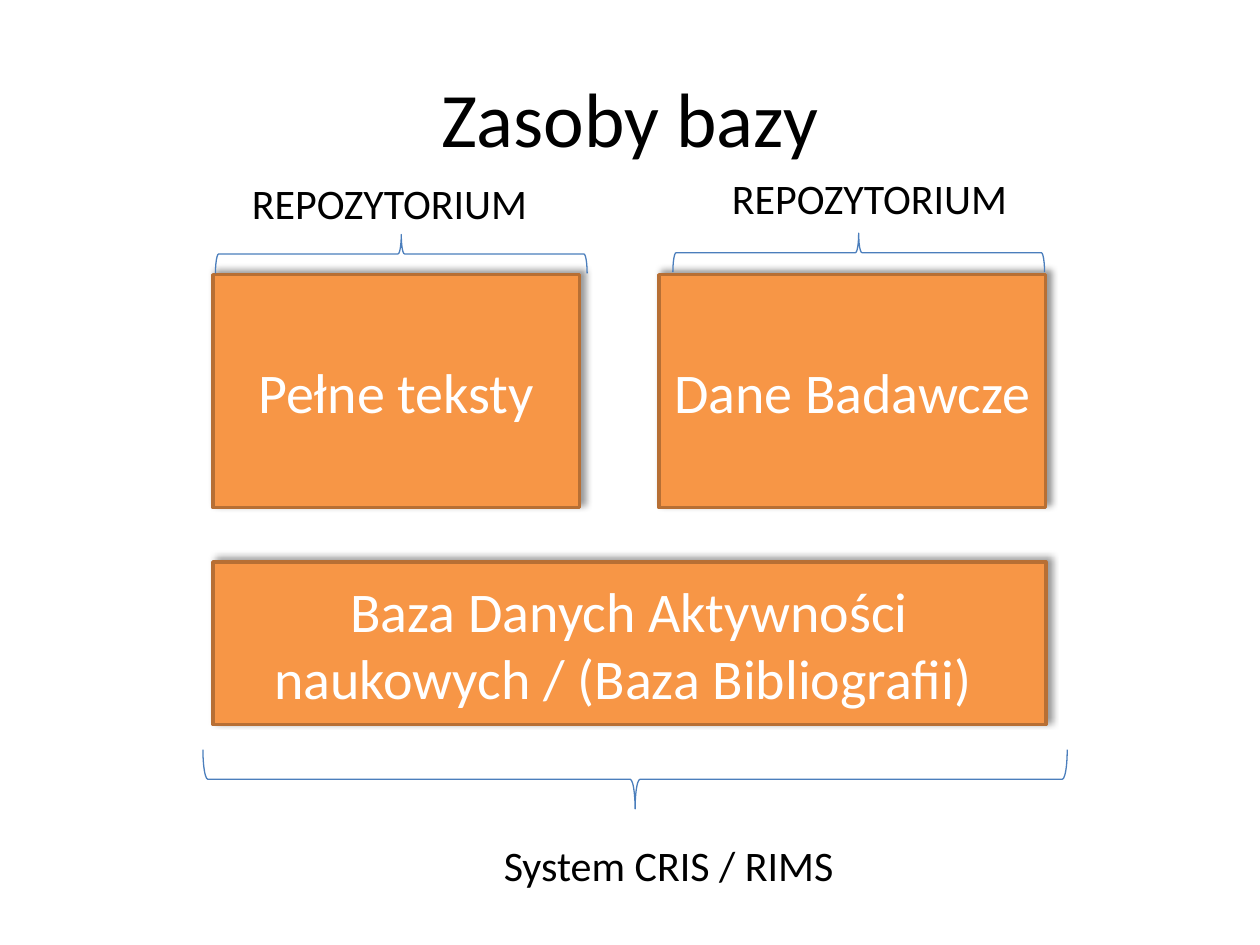
import pptx
import pptx.util
import pptx.dml.color
import pptx.enum.shapes
import pptx.enum.text
import pptx.oxml
import pptx.oxml.ns

Inches, Pt = pptx.util.Inches, pptx.util.Pt
SHAPE = pptx.enum.shapes.MSO_SHAPE
ALIGN, ANCHOR = pptx.enum.text.PP_ALIGN, pptx.enum.text.MSO_ANCHOR

LEFT, RIGHT = 1.69, 8.3
BOX_TOP, BOX_H = 2.18, 1.85
BRACE_W, BRACE_H = 2.95, 0.31


def rgb(value):
    return pptx.dml.color.RGBColor.from_string(value)


def write(shape, text, size, color, align):
    tf = shape.text_frame
    tf.text = text
    p = tf.paragraphs[0]
    p.alignment = align
    font = p.runs[0].font
    font.name, font.size = "Calibri", Pt(size)
    font.color.rgb = rgb(color)
    return tf


def add_shadow(shape):
    """Soft shadow towards the upper right."""
    shape.shadow.inherit = False
    effects = shape._element.spPr.find(pptx.oxml.ns.qn("a:effectLst"))
    effects.append(pptx.oxml.parse_xml(
        f'<a:outerShdw {pptx.oxml.ns.nsdecls("a")} blurRad="{Pt(4)}" dist="{Pt(3)}" '
        'dir="18900000" algn="bl" rotWithShape="0">'
        '<a:srgbClr val="000000"><a:alpha val="40000"/></a:srgbClr></a:outerShdw>'))


def add_title(s, text, x, y, w, h):
    title = s.shapes.title
    title.left, title.top, title.width, title.height = map(Inches, (x, y, w, h))
    tf = write(title, text, 44, "000000", ALIGN.CENTER)
    tf.vertical_anchor = ANCHOR.MIDDLE


def add_box(s, text, x, y, w, h):
    sp = s.shapes.add_shape(SHAPE.RECTANGLE, *map(Inches, (x, y, w, h)))
    sp.fill.solid()
    sp.fill.fore_color.rgb = rgb("F79646")
    sp.line.color.rgb = rgb("B76F34")
    sp.line.width = Pt(2)
    add_shadow(sp)
    tf = write(sp, text, 32, "FFFFFF", ALIGN.CENTER)
    tf.vertical_anchor = ANCHOR.MIDDLE


def add_brace(s, rotation, x, y, w, h):
    """Horizontal brace filling the box, made from a brace turned a quarter."""
    sp = s.shapes.add_shape(SHAPE.RIGHT_BRACE, Inches(x + (w - h) / 2),
                            Inches(y + (h - w) / 2), Inches(h), Inches(w))
    sp.rotation = rotation
    sp.fill.background()
    sp.line.color.rgb = rgb("4B7EBC")
    sp.line.width = Pt(0.75)
    sp.shadow.inherit = False


def add_label(s, text, x, y, w, h=0.5):
    sp = s.shapes.add_textbox(*map(Inches, (x, y, w, h)))
    tf = write(sp, text, 24, "000000", ALIGN.LEFT)
    tf.word_wrap = False
    tf.auto_size = pptx.enum.text.MSO_AUTO_SIZE.SHAPE_TO_FIT_TEXT


def add_repository(s, text, x, w, brace, label):
    """Box with a brace and a label above it; brace and label are (x, y)."""
    add_box(s, text, x, BOX_TOP, w, BOX_H)
    add_brace(s, 270, *brace, BRACE_W, BRACE_H)
    add_label(s, "REPOZYTORIUM", *label, 2.41)


def add_database(s, text, x, y, w, h):
    """Wide box with the system brace and its label below."""
    add_box(s, text, x, y, w, h)
    add_brace(s, 90, x - 0.08, y + h + 0.2, w + 0.25, 0.47)
    add_label(s, "System CRIS / RIMS", 3.9, 6.61, 2.84)


def main():
    prs = pptx.Presentation()
    prs.slide_width, prs.slide_height = Inches(10), Inches(7.5)
    s = prs.slides.add_slide(prs.slide_layouts[5])
    add_title(s, "Zasoby bazy", 0.5, 0.3, 9, 1.25)
    add_repository(s, "Pełne teksty", LEFT, 2.91, (1.71, 1.86), (1.9, 1.36))
    add_repository(s, "Dane Badawcze", RIGHT - 3.07, 3.07, (5.34, 1.85), (5.71, 1.32))
    add_database(s, "Baza Danych Aktywności naukowych / (Baza Bibliografii) ",
                 LEFT, 4.46, RIGHT - LEFT, 1.29)
    prs.save("out.pptx")


if __name__ == "__main__":
    main()
